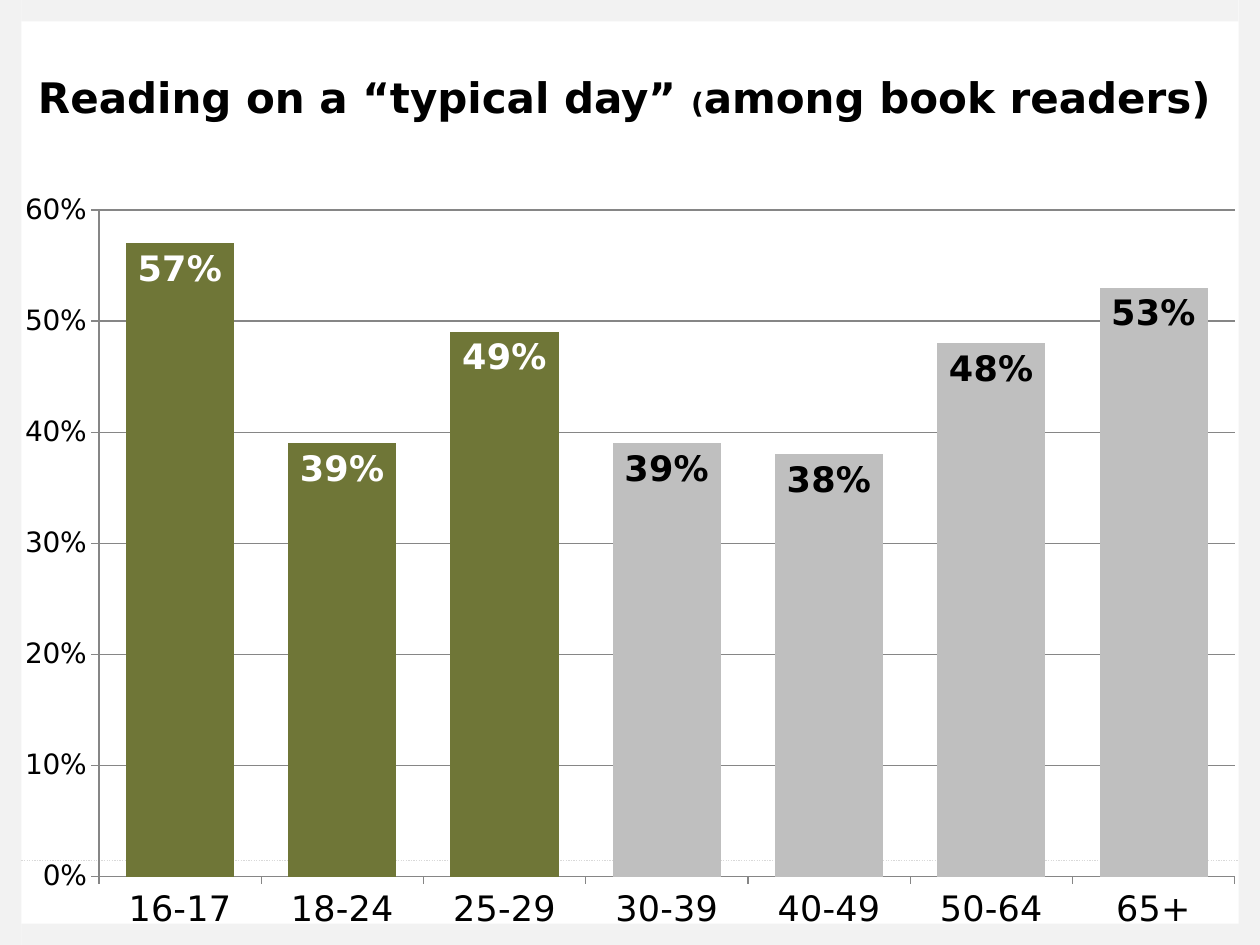
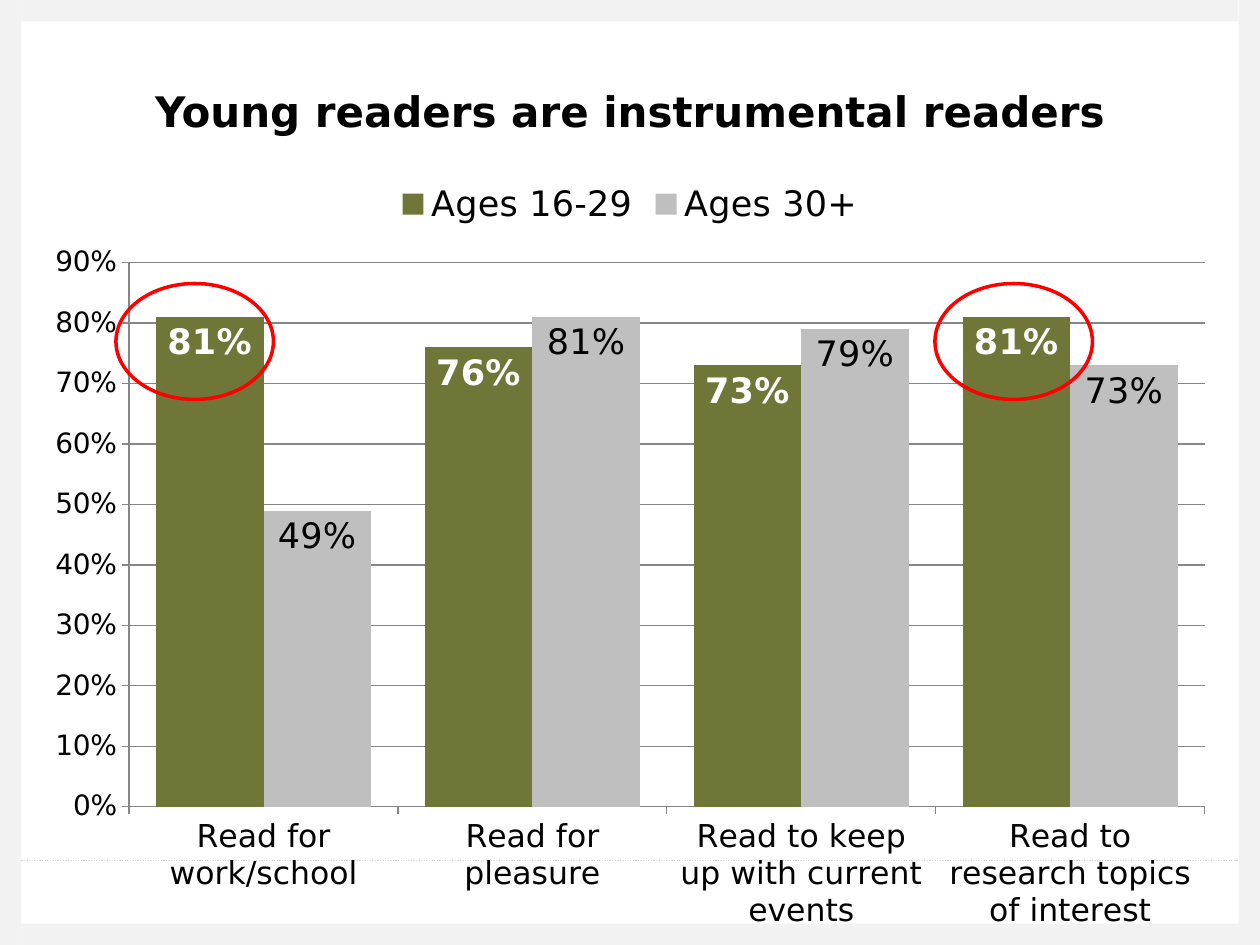
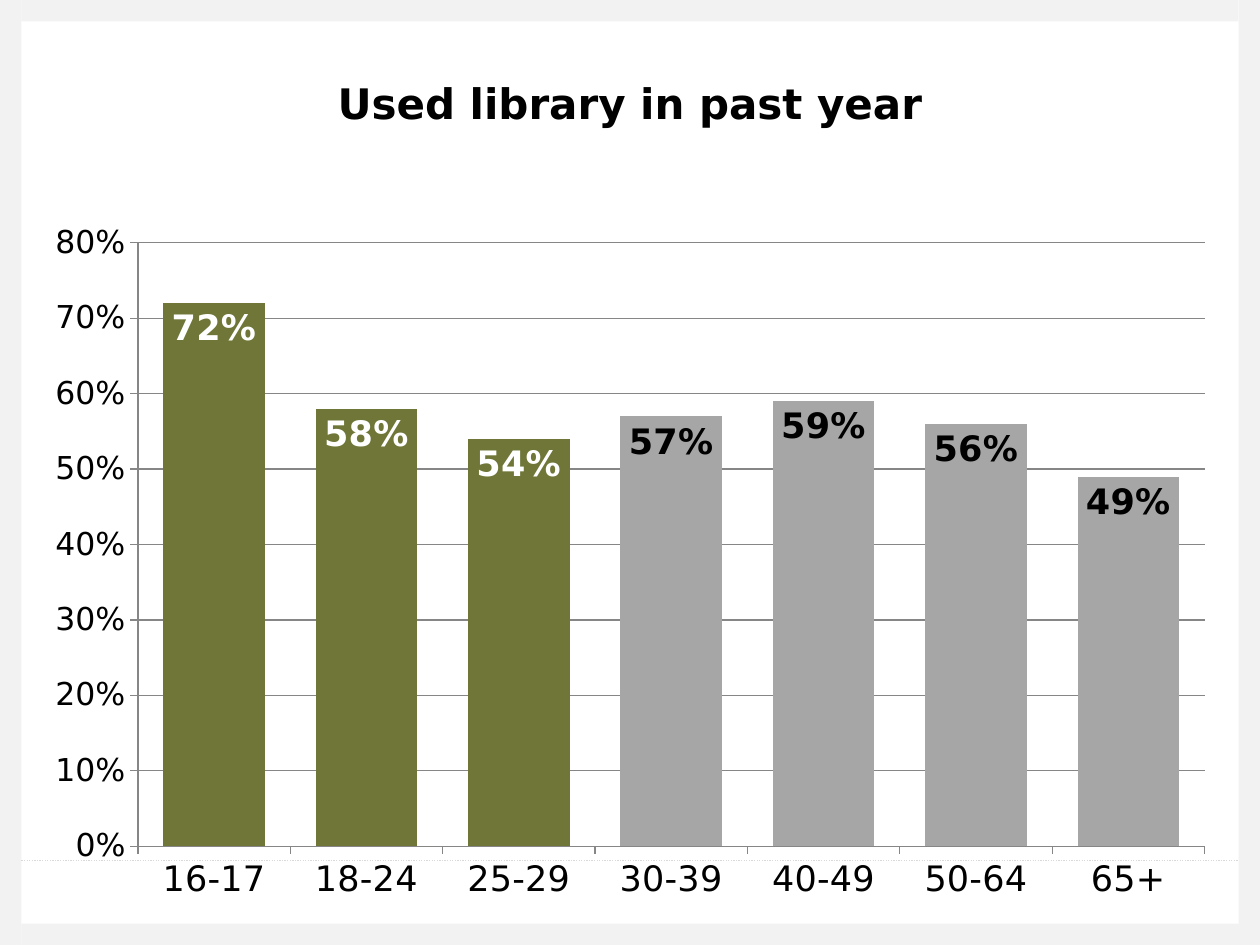
"""Build three slides of column charts on reading and library use by age."""
from lxml import etree
from pptx import Presentation
from pptx import util as u
from pptx.chart import data as cd
from pptx.dml.color import RGBColor
from pptx.enum import chart as ce, dml, shapes, text
from pptx.oxml.ns import qn

FONT = "DejaVu Sans"
BLACK = RGBColor(0, 0, 0)
WHITE = RGBColor(255, 255, 255)
OLIVE = RGBColor(0x6F, 0x76, 0x37)
SILVER = RGBColor(0xBF, 0xBF, 0xBF)
GRAY = RGBColor(0xA6, 0xA6, 0xA6)
EDGE = RGBColor(0xF2, 0xF2, 0xF2)
DOTS = RGBColor(0xD9, 0xD9, 0xD9)
AXIS = RGBColor(0x86, 0x86, 0x86)
RED = RGBColor(255, 0, 0)

WIDE, HIGH, BAND, FOOT = 10, 7.5, 0.17, 6.83
BANDS = [
    (0, 0, BAND, HIGH),
    (WIDE - BAND, 0, BAND, HIGH),
    (BAND, 0, WIDE - 2 * BAND, BAND),
    (BAND, HIGH - BAND, WIDE - BAND, BAND),
]
AGES = ["16-17", "18-24", "25-29", "30-39", "40-49", "50-64", "65+"]
YOUNG = 3

SLIDES = [
    {
        "title": [("Reading on a “typical day” ", 24), ("(", 16),
                  ("among book readers)", 24)],
        "head": (0.08, 0.25, 9.75, 1.03),
        "plot": (0, 1.42, 10, 6.08),
        "cats": AGES,
        "series": [("Series 1", [0.57, 0.39, 0.49, 0.39, 0.38, 0.48, 0.53],
                    SILVER, BLACK, True)],
        "sizes": (20, 16),
        "top": 0.6,
        "split": True,
    },
    {
        "title": [("Young readers are instrumental readers", 24)],
        "head": (0.25, 0.25, 9.5, 1.25),
        "plot": (0.25, 1.33, 9.5, 6.17),
        "cats": ["Read for work/school", "Read for pleasure",
                 "Read to keep up with current events",
                 "Read to research topics of interest"],
        "series": [
            ("Ages 16-29", [0.81, 0.76, 0.73, 0.81], OLIVE, WHITE, True),
            ("Ages 30+", [0.49, 0.81, 0.79, 0.73], SILVER, BLACK, False),
        ],
        "sizes": (18, 16),
        "top": 0.9,
        "rings": [(0.92, 2.25, 1.25, 0.92), (7.42, 2.25, 1.25, 0.92)],
    },
    {
        "title": [("Used library in past year", 24)],
        "head": (0.5, 0.3, 9, 1.03),
        "plot": (0.25, 1.67, 9.5, 5.58),
        "cats": AGES,
        "series": [("Series 1", [0.72, 0.58, 0.54, 0.57, 0.59, 0.56, 0.49],
                    GRAY, BLACK, True)],
        "sizes": (20, 18),
        "top": 0.8,
        "split": True,
    },
]


def place(box):
    return [u.Inches(n) for n in box]


def put(obj, **vals):
    for key, val in vals.items():
        setattr(obj, key, val)


def style(font, size, color=BLACK, bold=False):
    put(font, name=FONT, size=u.Pt(size), bold=bold)
    font.color.rgb = color


def paint(obj, color):
    obj.fill.solid()
    obj.fill.fore_color.rgb = color


def frame(slide):
    for box in BANDS:
        band = slide.shapes.add_shape(shapes.MSO_SHAPE.RECTANGLE, *place(box))
        band.shadow.inherit = False
        paint(band, EDGE)
        band.line.fill.background()
    ends = place((BAND, FOOT, WIDE - BAND, FOOT))
    rule = slide.shapes.add_connector(shapes.MSO_CONNECTOR.STRAIGHT, *ends)
    rule.line.color.rgb = DOTS
    put(rule.line, width=u.Pt(0.75), dash_style=dml.MSO_LINE.ROUND_DOT)
    etree.SubElement(rule.element.spPr, qn("a:effectLst"))


def head(slide, runs, box):
    area = slide.shapes.add_textbox(*place(box)).text_frame
    put(area, word_wrap=True, vertical_anchor=text.MSO_ANCHOR.MIDDLE)
    para = area.paragraphs[0]
    para.alignment = text.PP_ALIGN.CENTER
    for words, size in runs:
        run = para.add_run()
        run.text = words
        style(run.font, size, bold=True)


def axes(chart, sizes, top):
    for axis, size in zip((chart.category_axis, chart.value_axis), sizes):
        style(axis.tick_labels.font, size)
        put(axis, major_tick_mark=ce.XL_TICK_MARK.OUTSIDE,
            minor_tick_mark=ce.XL_TICK_MARK.NONE)
        axis.format.line.color.rgb = AXIS
    put(axis, minimum_scale=0, maximum_scale=top, major_unit=0.1,
        has_major_gridlines=True)
    axis.major_gridlines.format.line.color.rgb = AXIS
    put(axis.tick_labels, number_format="0%", number_format_is_linked=False)


def graph(slide, part):
    data = cd.CategoryChartData(number_format="0%")
    data.categories = part["cats"]
    for name, vals, *_ in part["series"]:
        data.add_series(name, vals)
    chart = slide.shapes.add_chart(ce.XL_CHART_TYPE.COLUMN_CLUSTERED,
                                   *place(part["plot"]), data).chart
    many = len(part["series"]) > 1
    put(chart, has_title=False, has_legend=many)
    style(chart.font, 10)
    if many:
        put(chart.legend, position=ce.XL_LEGEND_POSITION.TOP,
            include_in_layout=False)
        style(chart.legend.font, 20)
    axes(chart, part["sizes"], part["top"])
    plot = chart.plots[0]
    put(plot, gap_width=50, overlap=0, vary_by_categories=False)
    spot = ce.XL_LABEL_POSITION.INSIDE_END
    for row, (_, _, fill, ink, bold) in zip(plot.series, part["series"]):
        paint(row.format, fill)
        row.invert_if_negative = False
        put(row.data_labels, show_value=True, position=spot,
            number_format="0%", number_format_is_linked=False)
        style(row.data_labels.font, 20, ink, bold)
        for i in range(YOUNG if part.get("split") else 0):
            point = row.points[i]
            paint(point.format, OLIVE)
            style(point.data_label.font, 20, WHITE, True)
            point.data_label.position = spot


def ring(slide, box):
    oval = slide.shapes.add_shape(shapes.MSO_SHAPE.OVAL, *place(box))
    oval.shadow.inherit = False
    oval.fill.background()
    oval.line.color.rgb = RED
    oval.line.width = u.Pt(2)


def main():
    deck = Presentation()
    put(deck, slide_width=u.Inches(WIDE), slide_height=u.Inches(HIGH))
    for part in SLIDES:
        slide = deck.slides.add_slide(deck.slide_layouts[6])
        paint(slide.background, WHITE)
        frame(slide)
        head(slide, part["title"], part["head"])
        graph(slide, part)
        for box in part.get("rings", []):
            ring(slide, box)
    deck.save("out.pptx")


if __name__ == "__main__":
    main()
